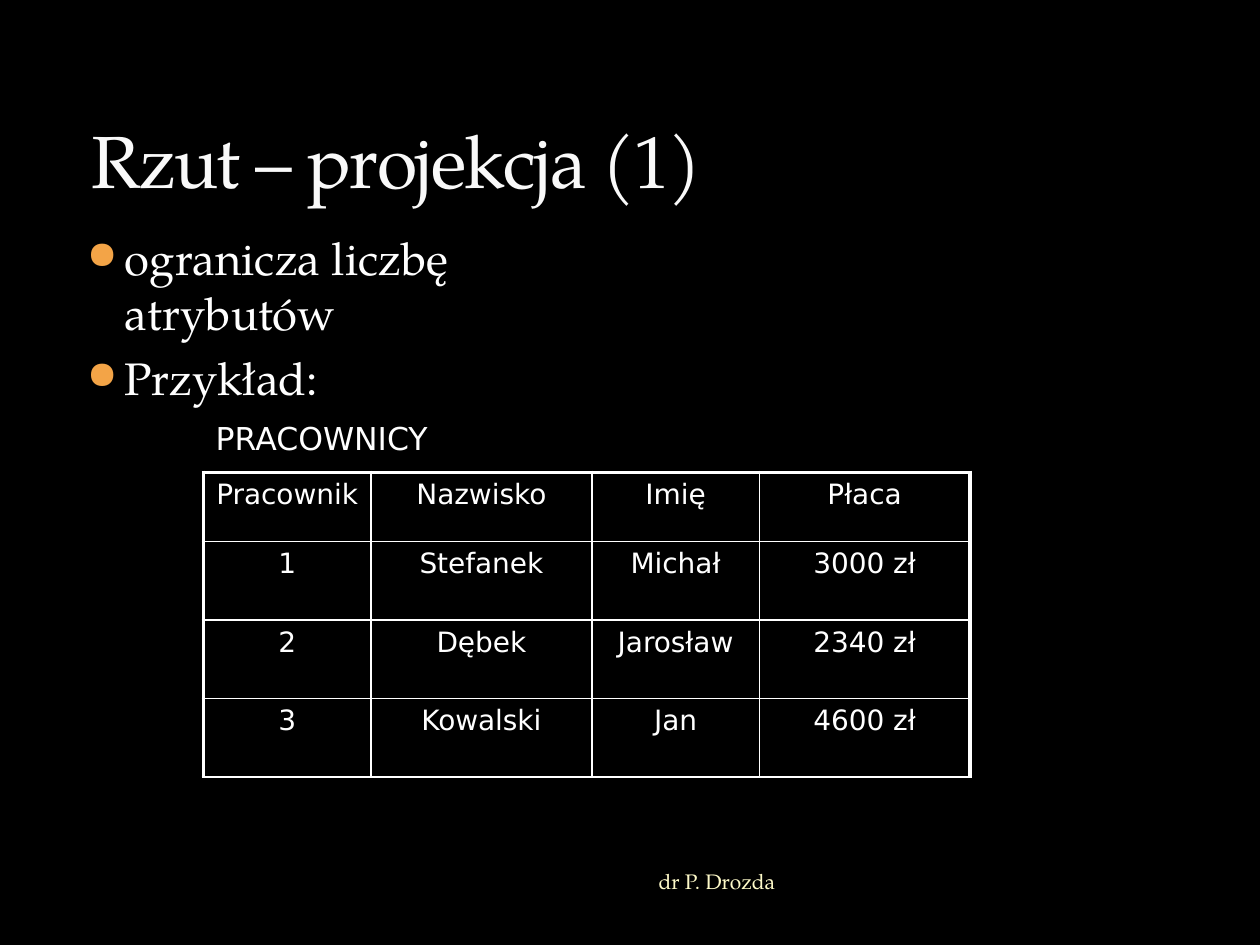
from lxml.etree import SubElement
from pptx import Presentation
from pptx.dml.color import RGBColor
from pptx.enum.text import MSO_ANCHOR, MSO_AUTO_SIZE, PP_ALIGN
from pptx.oxml.ns import qn
from pptx.util import Cm, Pt

BLACK = RGBColor(0x00, 0x00, 0x00)
WHITE = RGBColor(0xFF, 0xFF, 0xFF)
OFF_WHITE = RGBColor(0xF9, 0xF9, 0xF9)
CREAM = RGBColor(0xFE, 0xFA, 0xC9)
ORANGE = RGBColor(0xF3, 0xA4, 0x47)
SERIF = "TeX Gyre Pagella"
SANS = "DejaVu Sans"
THIN, THICK = 1, 2.25

EMPLOYEES = [
    ("Pracownik", "Nazwisko", "Imię", "Płaca"),
    ("1", "Stefanek", "Michał", "3000 zł"),
    ("2", "Dębek", "Jarosław", "2340 zł"),
    ("3", "Kowalski", "Jan", "4600 zł"),
]


class SlideBuilder:
    def __init__(self, prs):
        self.slide = prs.slides.add_slide(prs.slide_layouts[5])
        fill = self.slide.background.fill
        fill.solid()
        fill.fore_color.rgb = BLACK

    def style(self, p, font, size, color, align=PP_ALIGN.LEFT):
        p.alignment = align
        for r in p.runs:
            r.font.name = font
            r.font.size = Pt(size)
            r.font.color.rgb = color

    def title(self, text, left, top, width, height):
        s = self.slide.shapes.title
        s.left, s.top, s.width, s.height = map(Cm, (left, top, width, height))
        tf = s.text_frame
        tf.text = text
        tf.auto_size = MSO_AUTO_SIZE.NONE
        tf.vertical_anchor = MSO_ANCHOR.BOTTOM
        p = tf.paragraphs[0]
        self.style(p, SERIF, 42, OFF_WHITE)
        p.runs[0].font._element.set("spc", "-100")

    def text(self, text, left, top, width, height, font, size, color,
             align=PP_ALIGN.LEFT, anchor=MSO_ANCHOR.TOP):
        s = self.slide.shapes.add_textbox(*map(Cm, (left, top, width, height)))
        tf = s.text_frame
        tf.word_wrap = True
        tf.vertical_anchor = anchor
        tf.text = text
        for p in tf.paragraphs:
            self.style(p, font, size, color, align)
        return tf

    def bullets(self, items, left, top, width, height):
        tf = self.text("\n".join(items), left, top, width, height, SERIF, 26, WHITE)
        for p in tf.paragraphs:
            p.space_before = Pt(6)
            pPr = p._p.get_or_add_pPr()
            pPr.set("marL", str(Cm(0.76)))
            pPr.set("indent", str(Cm(-0.76)))
            color = SubElement(pPr, qn("a:buClr"))
            SubElement(color, qn("a:srgbClr"), val=str(ORANGE))
            SubElement(pPr, qn("a:buSzPct"), val="85000")
            SubElement(pPr, qn("a:buChar"), char="●")

    def borders(self, cell, **widths):
        tcPr = cell._tc.get_or_add_tcPr()
        for side, width in widths.items():
            ln = SubElement(tcPr, qn(f"a:ln{side}"), w=str(Pt(width)))
            fill = SubElement(ln, qn("a:solidFill"))
            SubElement(fill, qn("a:srgbClr"), val=str(WHITE))

    def table(self, rows, left, top, col_widths, row_heights):
        frame = self.slide.shapes.add_table(
            len(rows), len(col_widths), Cm(left), Cm(top),
            Cm(sum(col_widths)), Cm(sum(row_heights)))
        table = frame.table
        for col, width in zip(table.columns, col_widths):
            col.width = Cm(width)
        last = len(col_widths) - 1
        for i, (values, height) in enumerate(zip(rows, row_heights)):
            table.rows[i].height = Cm(height)
            for j, value in enumerate(values):
                cell = table.cell(i, j)
                cell.text = value
                p = cell.text_frame.paragraphs[0]
                self.style(p, SANS, 16, WHITE, PP_ALIGN.CENTER)
                p.runs[0].font.bold = False
                self.borders(cell,
                             L=THICK if j == 0 else THIN,
                             R=THICK if j == last else THIN,
                             T=THICK if i == 0 else THIN,
                             B=THIN)
                cell.fill.background()


def main():
    prs = Presentation()
    prs.slide_width, prs.slide_height = Cm(25.4), Cm(19.05)
    b = SlideBuilder(prs)
    b.title("Rzut – projekcja (1)", 1.6, 0.84, 22.23, 3.38)
    b.bullets(["ogranicza liczbę atrybutów", "Przykład:"], 1.5, 4.52, 10.9, 4.8)
    b.text("PRACOWNICY", 4.1, 8.33, 5.2, 1.02, SANS, 18, WHITE)
    b.table(EMPLOYEES, 4.1, 9.52, [3.38, 4.45, 3.38, 4.24], [1.4] + [1.58] * 3)
    b.text("dr P. Drozda", 5.92, 17.22, 9.96, 1.07, SERIF, 12, CREAM,
           PP_ALIGN.RIGHT, MSO_ANCHOR.MIDDLE)
    prs.save("out.pptx")


if __name__ == "__main__":
    main()
